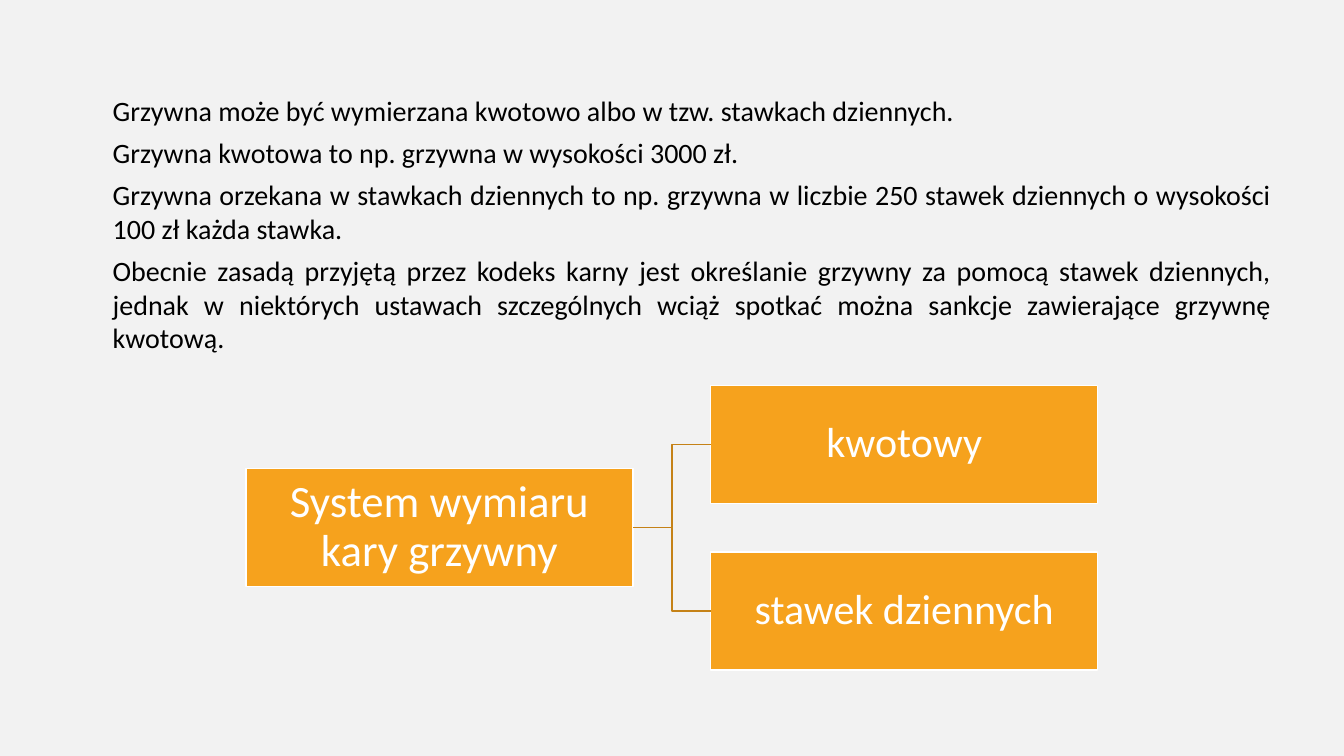
from lxml import etree
from pptx import Presentation
from pptx.dml.color import RGBColor
from pptx.enum import shapes, text
from pptx.oxml import ns
from pptx.util import Pt

COLORS = {
    "background": "F2F2F2",
    "body": "000000",
    "box": "F6A21D",
    "white": "FFFFFF",
    "branch": "C58217",
}
BOX_WIDTH, BOX_HEIGHT = 276.5, 84.4
ROOT_LEFT, ROOT_TOP = 175.7, 334.7
COLUMN_STEP, ROW_OFFSET = 332, 59.5


def write(para, words, size, color, align, **spacing):
    """Fill a paragraph; spacing names are paragraph attributes."""
    para.alignment = align
    for name, value in spacing.items():
        setattr(para, name, value)
    span = para.add_run()
    span.text = words
    span.font.name = "Calibri"
    span.font.size = Pt(size)
    span.font.color.rgb = RGBColor.from_string(COLORS[color])


def add_box(page, words, left, top, size):
    box = page.shapes.add_shape(
        shapes.MSO_SHAPE.RECTANGLE, Pt(left), Pt(top), Pt(BOX_WIDTH), Pt(BOX_HEIGHT)
    )
    box.shadow.inherit = False
    box.fill.solid()
    box.fill.fore_color.rgb = RGBColor.from_string(COLORS["box"])
    box.line.color.rgb = RGBColor.from_string(COLORS["white"])
    box.line.width = Pt(1)
    frame = box.text_frame
    frame.word_wrap = True
    frame.vertical_anchor = text.MSO_ANCHOR.MIDDLE
    for side in ("left", "top", "right", "bottom"):
        setattr(frame, f"margin_{side}", Pt(1.5))
    write(frame.paragraphs[0], words, size, "white", text.PP_ALIGN.CENTER, line_spacing=0.9)
    return box


deck = Presentation()
deck.slide_width, deck.slide_height = Pt(960), Pt(540)
page = deck.slides.add_slide(deck.slide_layouts[6])
page.background.fill.solid()
page.background.fill.fore_color.rgb = RGBColor.from_string(COLORS["background"])

# Explanation
LEFT, JUSTIFY = text.PP_ALIGN.LEFT, text.PP_ALIGN.JUSTIFY
explanation = [
    ("Grzywna może być wymierzana kwotowo albo w tzw. stawkach dziennych.", LEFT),
    ("Grzywna kwotowa to np. grzywna w wysokości 3000 zł.", LEFT),
    ("Grzywna orzekana w stawkach dziennych to np. grzywna w liczbie 250 stawek "
     "dziennych o wysokości 100 zł każda stawka.", JUSTIFY),
    ("Obecnie zasadą przyjętą przez kodeks karny jest określanie grzywny za pomocą "
     "stawek dziennych, jednak w niektórych ustawach szczególnych wciąż spotkać można "
     "sankcje zawierające grzywnę kwotową.", JUSTIFY),
]
body = page.shapes.add_textbox(Pt(73.4), Pt(63.4), Pt(841.7), Pt(195)).text_frame
body.word_wrap = True
body.auto_size = text.MSO_AUTO_SIZE.SHAPE_TO_FIT_TEXT
for index, (words, align) in enumerate(explanation):
    para = body.add_paragraph() if index else body.paragraphs[0]
    write(para, words, 20, "body", align, space_after=Pt(6))

# Diagram: one root, two branches
root = add_box(page, "System wymiaru kary grzywny", ROOT_LEFT, ROOT_TOP, 32)
for words, direction in (("kwotowy", -1), ("stawek dziennych", 1)):
    top = ROOT_TOP + direction * ROW_OFFSET
    system = add_box(page, words, ROOT_LEFT + COLUMN_STEP, top, 30)
    branch = page.shapes.add_connector(shapes.MSO_CONNECTOR.ELBOW, 0, 0, 0, 0)
    branch.begin_connect(root, 3)
    branch.end_connect(system, 1)
    branch.line.color.rgb = RGBColor.from_string(COLORS["branch"])
    branch.line.width = Pt(1)
    etree.SubElement(branch.element.spPr, ns.qn("a:effectLst"))

deck.save("out.pptx")
